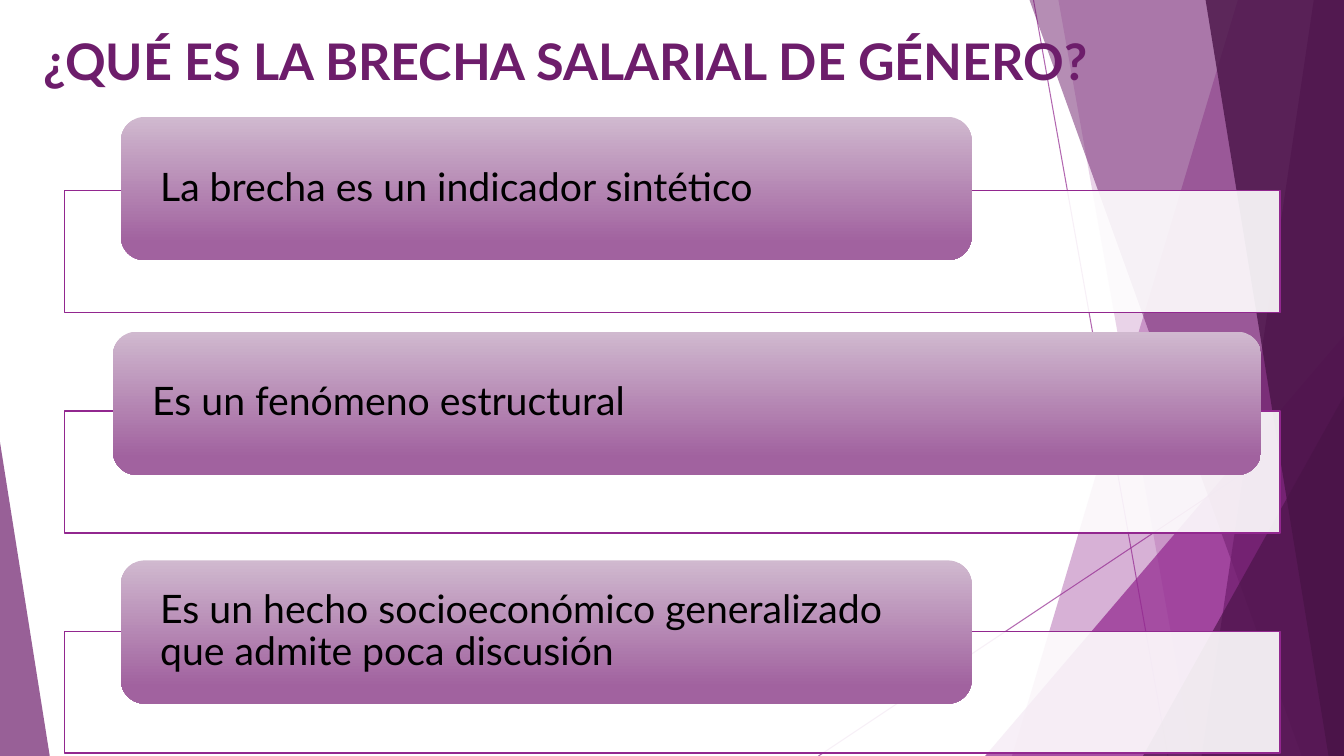
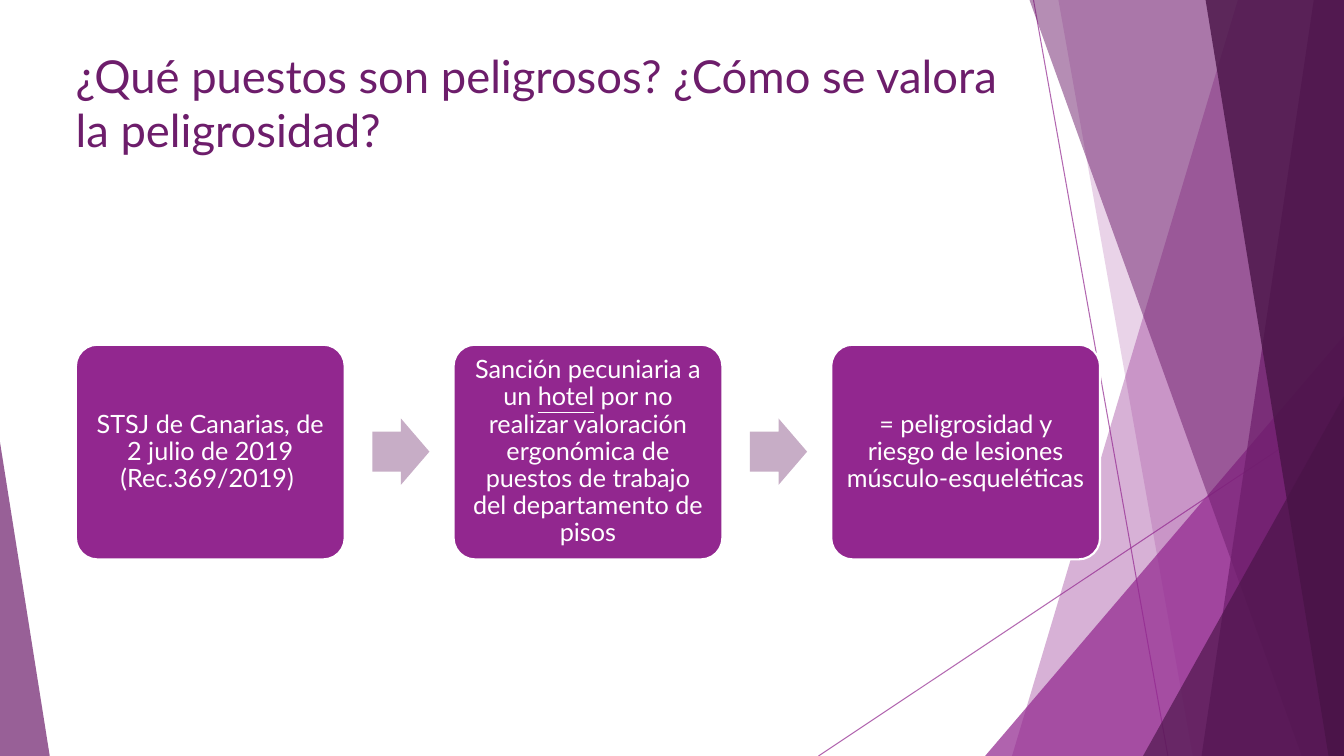
"""Two slides on the gender pay gap and hazardous jobs, set on a faceted purple backdrop."""
import pptx
import pptx.util
import pptx.dml.color
import pptx.enum.shapes
import pptx.enum.text
import pptx.oxml.ns
import lxml.etree

PURPLE = pptx.dml.color.RGBColor(0x92, 0x27, 0x8F)
PLUM = pptx.dml.color.RGBColor(0x6D, 0x1D, 0x6B)
DARK = pptx.dml.color.RGBColor(0x49, 0x14, 0x47)
PALE = pptx.dml.color.RGBColor(0xD0, 0xB9, 0xCF)
MAUVE = pptx.dml.color.RGBColor(0xA1, 0x62, 0x9F)
LILAC = pptx.dml.color.RGBColor(0xC7, 0xAD, 0xC6)
WHITE = pptx.dml.color.RGBColor(0xFF, 0xFF, 0xFF)
BLACK = pptx.dml.color.RGBColor(0, 0, 0)
FONT = "Lato"
SHAPE = pptx.enum.shapes.MSO_SHAPE
ALIGN = pptx.enum.text.PP_ALIGN
ANCHOR = pptx.enum.text.MSO_ANCHOR

deck = pptx.Presentation()
deck.slide_width = pptx.util.Inches(13.33)
deck.slide_height = pptx.util.Inches(7.5)
COLUMN = deck.slide_width / 100
ROW = deck.slide_height / 100


def paint(shape, fill, colour, opacity=100):
    """Fill a shape or its line with one colour, see-through below 100."""
    fill.solid()
    fill.fore_color.rgb = colour
    if opacity < 100:
        tint = shape._element.spPr.find(".//" + pptx.oxml.ns.qn("a:srgbClr"))
        alpha = lxml.etree.SubElement(tint, pptx.oxml.ns.qn("a:alpha"))
        alpha.set("val", str(opacity * 1000))


def write(box, spans, size, colour, align=ALIGN.LEFT, anchor=ANCHOR.MIDDLE):
    """Write spans as one paragraph, underlining every second one."""
    box.text_frame.word_wrap = True
    box.text_frame.vertical_anchor = anchor
    para = box.text_frame.paragraphs[0]
    para.alignment = align
    para.font.name = FONT
    para.font.size = pptx.util.Pt(size)
    para.font.color.rgb = colour
    for index, text in enumerate(spans):
        span = para.add_run()
        span.text = text
        if index % 2:
            span.font.underline = True
    return para


rays = [(76.9, 0, 86.9, 100), (100, 53.7, 60.9, 100)]
# Each facet: apex column, apex row, left and right column of the base, colour, opacity
facets = [
    (92.1, 0, 75.3, 100, PURPLE, 36),
    (78.75, 0, 88.75, 100, PURPLE, 20),
    (100, 44.4, 73.3, 100, PURPLE, 72),
    (76.6, 0, 96.85, 100, PLUM, 50),
    (97.75, 0, 89.4, 100, PLUM, 70),
    (89.7, 0, 98.85, 100, DARK, 80),
    (100, 52.4, 85.05, 100, DARK, 66),
    (0, 58.5, 0, 3.7, PLUM, 70),
]
titles = [
    ("¿QUÉ ES LA BRECHA SALARIAL DE GÉNERO?", 2.5, 3.3, 90.5, 12.1, 36, True),
    ("¿Qué puestos son peligrosos? ¿Cómo se valora la peligrosidad?", 4.9, 5.7, 70.5, 16, 32.4, False),
]

for title, left, top, width, height, size, bold in titles:
    page = deck.slides.add_slide(deck.slide_layouts[6])
    for x1, y1, x2, y2 in rays:
        ray = page.shapes.add_connector(
            pptx.enum.shapes.MSO_CONNECTOR.STRAIGHT,
            int(x1 * COLUMN), int(y1 * ROW), int(x2 * COLUMN), int(y2 * ROW))
        ray.line.width = pptx.util.Pt(0.75)
        paint(ray, ray.line.fill, PURPLE, 70)
        lxml.etree.SubElement(ray._element.spPr, pptx.oxml.ns.qn("a:effectLst"))
    for apex, peak, base, right, colour, opacity in facets:
        if peak:
            facet = page.shapes.add_shape(
                SHAPE.ISOSCELES_TRIANGLE, int(base * COLUMN), int(peak * ROW),
                int((right - base) * COLUMN), int((100 - peak) * ROW))
            facet.adjustments[0] = (apex - base) / (right - base)
        else:
            outline = page.shapes.build_freeform(int(apex * COLUMN), 0)
            corners = [(right, 0), (right, 100), (base, 100)]
            outline.add_line_segments([(int(x * COLUMN), int(y * ROW)) for x, y in corners])
            facet = outline.convert_to_shape()
        paint(facet, facet.fill, colour, opacity)
        facet.line.fill.background()
        facet.shadow.inherit = False
    heading = page.shapes.add_textbox(
        int(left * COLUMN), int(top * ROW), int(width * COLUMN), int(height * ROW))
    write(heading, [title], size, PLUM, anchor=ANCHOR.TOP).font.bold = bold

gap_page, hazard_page = deck.slides

ideas = [
    ("La brecha es un indicador sintético", 9, 15.47, 63.3),
    ("Es un fenómeno estructural", 8.4, 43.87, 85.43),
    ("Es un hecho socioeconómico generalizado que admite poca discusión", 9, 74.13, 63.3),
]
for index, (idea, left, top, width) in enumerate(ideas):
    frame = gap_page.shapes.add_shape(
        SHAPE.RECTANGLE, int(4.8 * COLUMN), int((25.2 + 29.15 * index) * ROW),
        int(90.45 * COLUMN), int(16.13 * ROW))
    paint(frame, frame.fill, WHITE, 90)
    paint(frame, frame.line.fill, PURPLE)
    frame.line.width = pptx.util.Pt(1)
    frame.shadow.inherit = False
    card = gap_page.shapes.add_shape(
        SHAPE.ROUNDED_RECTANGLE, int(left * COLUMN), int(top * ROW),
        int(width * COLUMN), int(18.95 * ROW))
    card.fill.gradient()
    card.fill.gradient_angle = 270
    for stop, colour, position in zip(card.fill.gradient_stops, (PALE, MAUVE), (0, 0.88)):
        stop.color.rgb = colour
        stop.position = position
    card.line.fill.background()
    card.shadow.inherit = False
    card.text_frame.margin_left = card.text_frame.margin_right = int(2.4 * COLUMN)
    card.text_frame.margin_top = card.text_frame.margin_bottom = 0
    write(card, [idea], 28, BLACK).line_spacing = 0.9

steps = [
    ["STSJ de Canarias, de 2 julio de 2019 (Rec.369/2019) "],
    ["Sanción pecuniaria a un ", "hotel",
     " por no realizar valoración ergonómica de puestos de trabajo del departamento de pisos"],
    ["= peligrosidad y riesgo de lesiones músculo-esqueléticas "],
]
STEP_PITCH = 28.1
for index, spans in enumerate(steps):
    if index:
        arrow = hazard_page.shapes.add_shape(
            SHAPE.RIGHT_ARROW, int((27.7 + STEP_PITCH * (index - 1)) * COLUMN), int(55.35 * ROW),
            int(4.25 * COLUMN), int(8.8 * ROW))
        arrow.adjustments[0] = 0.6
        paint(arrow, arrow.fill, LILAC)
        arrow.line.fill.background()
        arrow.shadow.inherit = False
    card = hazard_page.shapes.add_shape(
        SHAPE.ROUNDED_RECTANGLE, int((5.65 + STEP_PITCH * index) * COLUMN), int(45.6 * ROW),
        int(20 * COLUMN), int(28.4 * ROW))
    card.adjustments[0] = 0.1
    paint(card, card.fill, PURPLE)
    paint(card, card.line.fill, WHITE)
    card.line.width = pptx.util.Pt(1.5)
    card.shadow.inherit = False
    card.text_frame.margin_left = card.text_frame.margin_right = int(0.5 * COLUMN)
    card.text_frame.margin_top = card.text_frame.margin_bottom = int(0.9 * ROW)
    write(card, spans, 18, WHITE, ALIGN.CENTER).line_spacing = 0.9

deck.save("out.pptx")
